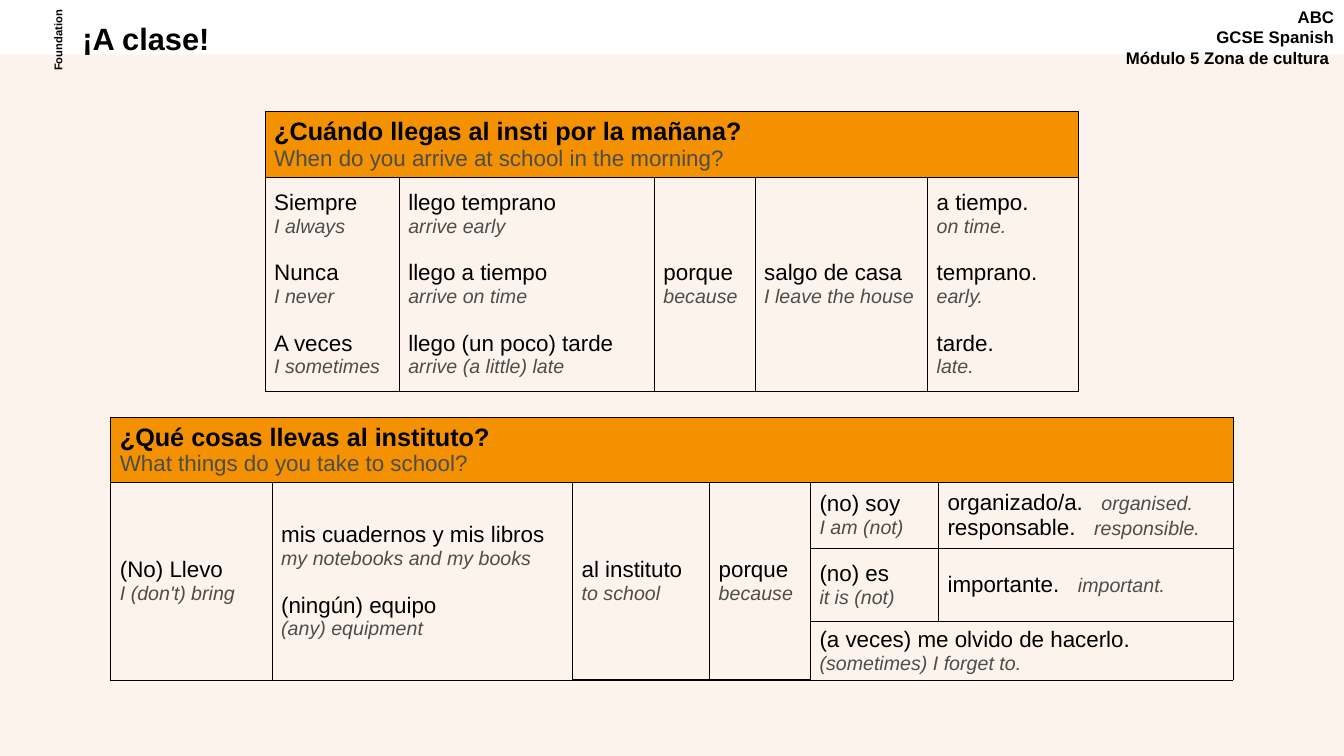
from dataclasses import dataclass

from lxml import etree
from pptx import Presentation, util as u
from pptx.dml import color
from pptx.enum import shapes, text
from pptx.oxml import ns

WIDTH, HEIGHT = u.Inches(13.33), u.Inches(7.5)


@dataclass(frozen=True)
class Theme:
    font: str = "Arial"
    ink: str = "000000"
    muted: str = "4D4D4C"
    accent: str = "F39100"
    paper: str = "FDF3ED"
    title: int = 22
    heading: int = 18
    body: int = 16
    gloss: int = 14
    label: int = 12
    tag: int = 8
    rule: float = 0.75
    heavy_rule: float = 1
    gap: float = 16.6


THEME = Theme()
HEADING = {"size": THEME.heading, "color": THEME.ink, "bold": True}
SUBHEADING = {"size": THEME.body, "color": THEME.muted}
SPANISH = {"size": THEME.body, "color": THEME.ink}
ENGLISH = {"size": THEME.gloss, "color": THEME.muted, "italic": True}


def across(percent):
    return round(WIDTH * percent / 100)


def down(percent):
    return round(HEIGHT * percent / 100)


def apply(target, values):
    for name, value in values.items():
        setattr(target, name, value)


def add_span(para, words, style):
    span = para.add_run()
    span.text = words
    values = {"name": THEME.font, **style, "size": u.Pt(style["size"])}
    span.font.color.rgb = color.RGBColor.from_string(values.pop("color"))
    apply(span.font, values)


def next_para(frame):
    first = frame.paragraphs[0]
    return frame.add_paragraph() if first.runs else first


def add_label(page, area, lines, size, para_format, **box_format):
    left, top, width, height = area
    box = page.shapes.add_textbox(across(left), down(top), across(width), down(height))
    apply(box, box_format)
    box.text_frame.word_wrap = True
    for line in lines:
        para = next_para(box.text_frame)
        apply(para, para_format)
        add_span(para, line, {"size": size, "color": THEME.ink, "bold": True})


def add_backdrop(page):
    top = down(7.2)
    panel = page.shapes.add_shape(shapes.MSO_SHAPE.RECTANGLE, 0, top, WIDTH, HEIGHT - top)
    panel.shadow.inherit = False
    panel.fill.solid()
    panel.fill.fore_color.rgb = color.RGBColor.from_string(THEME.paper)
    panel.line.fill.background()


def add_borders(cell, heavy):
    properties = cell._tc.get_or_add_tcPr()
    for position, side in enumerate(("lnL", "lnR", "lnT", "lnB")):
        points = THEME.heavy_rule if heavy and side in ("lnT", "lnB") else THEME.rule
        line = etree.Element(ns.qn(f"a:{side}"), w=str(u.Pt(points)))
        fill = etree.SubElement(line, ns.qn("a:solidFill"))
        etree.SubElement(fill, ns.qn("a:srgbClr"), val=THEME.ink)
        properties.insert(position, line)


def write_stacked(cell, phrases, styles=(SPANISH, ENGLISH)):
    for index, phrase in enumerate(phrases):
        for order, (words, style) in enumerate(zip(phrase, styles)):
            para = next_para(cell.text_frame)
            if index and not order:
                para.space_before = u.Pt(THEME.gap)
            add_span(para, words, style)


def write_inline(cell, phrases):
    for spanish, english, stop in phrases:
        para = next_para(cell.text_frame)
        tabs = etree.SubElement(para._p.get_or_add_pPr(), ns.qn("a:tabLst"))
        etree.SubElement(tabs, ns.qn("a:tab"), pos=str(across(stop)), algn="l")
        add_span(para, spanish + "\t", SPANISH)
        add_span(para, english, ENGLISH)


def add_grid(page, left, top, columns, rows, heading, heavy_columns=()):
    table = page.shapes.add_table(
        len(rows), len(columns), across(left), down(top),
        across(sum(columns)), down(sum(rows))).table
    apply(table, {"first_row": False, "horz_banding": False})
    for column, share in zip(table.columns, columns):
        column.width = across(share)
    for row, share in zip(table.rows, rows):
        row.height = down(share)
    margins = {"margin_left": 0.09, "margin_right": 0.09,
               "margin_top": 0.04, "margin_bottom": 0.04}
    for r in range(len(rows)):
        for c in range(len(columns)):
            cell = table.cell(r, c)
            cell.vertical_anchor = text.MSO_ANCHOR.MIDDLE
            apply(cell, {name: u.Inches(size) for name, size in margins.items()})
            if r:
                cell.fill.background()
            else:
                cell.fill.solid()
                cell.fill.fore_color.rgb = color.RGBColor.from_string(THEME.accent)
            add_borders(cell, r and c in heavy_columns)
    table.cell(0, 0).merge(table.cell(0, len(columns) - 1))
    write_stacked(table.cell(0, 0), [heading], (HEADING, SUBHEADING))
    return table


def add_arrival_table(page):
    table = add_grid(
        page, 19.73, 14.8, (9.98, 18.98, 7.5, 12.83, 11.25), (8.67, 28.27),
        ("¿Cuándo llegas al insti por la mañana?",
         "When do you arrive at school in the morning?"))
    columns = [
        [("Siempre", "I always"), ("Nunca", "I never"), ("A veces", "I sometimes")],
        [("llego temprano", "arrive early"), ("llego a tiempo", "arrive on time"),
         ("llego (un poco) tarde", "arrive (a little) late")],
        [("porque", "because")],
        [("salgo de casa", "I leave the house")],
        [("a tiempo.", "on time."), ("temprano.", "early."), ("tarde.", "late.")],
    ]
    for column, phrases in enumerate(columns):
        write_stacked(table.cell(1, column), phrases)


def add_belongings_table(page):
    table = add_grid(
        page, 8.25, 55.2, (12, 22.36, 10.2, 7.5, 9.53, 21.91), (8.13, 8.67, 9.73, 7.47),
        ("¿Qué cosas llevas al instituto?", "What things do you take to school?"),
        heavy_columns=(2, 3))
    columns = [
        [("(No) Llevo", "I (don't) bring")],
        [("mis cuadernos y mis libros", "my notebooks and my books"),
         ("(ningún) equipo", "(any) equipment")],
        [("al instituto", "to school")],
        [("porque", "because")],
    ]
    for column, phrases in enumerate(columns):
        table.cell(1, column).merge(table.cell(3, column))
        write_stacked(table.cell(1, column), phrases)
    table.cell(3, 4).merge(table.cell(3, 5))
    endings = [("(no) soy", "I am (not)"), ("(no) es", "it is (not)"),
               ("(a veces) me olvido de hacerlo.", "(sometimes) I forget to.")]
    for row, phrase in enumerate(endings, 1):
        write_stacked(table.cell(row, 4), [phrase])
    write_inline(table.cell(1, 5), [("organizado/a.", "organised.", 11.45),
                                    ("responsable.", "responsible.", 10.9)])
    write_inline(table.cell(2, 5), [("importante.", "important.", 9.7)])


def main():
    deck = Presentation()
    apply(deck, {"slide_width": WIDTH, "slide_height": HEIGHT})
    page = deck.slides.add_slide(deck.slide_layouts[6])
    add_backdrop(page)
    add_label(page, (82.45, 0.27, 17.55, 10.27),
              ("ABC", "GCSE Spanish", "Módulo 5 Zona de cultura "),
              THEME.label, {"alignment": text.PP_ALIGN.RIGHT})
    add_label(page, (5.4, 2.53, 51.61, 5.73), ("¡A clase!",),
              THEME.title, {"line_spacing": 0.9})
    add_label(page, (0.45, 3.87, 7.65, 2.93), ("Foundation",),
              THEME.tag, {"alignment": text.PP_ALIGN.CENTER}, rotation=270)
    add_arrival_table(page)
    add_belongings_table(page)
    deck.save("out.pptx")


if __name__ == "__main__":
    main()
